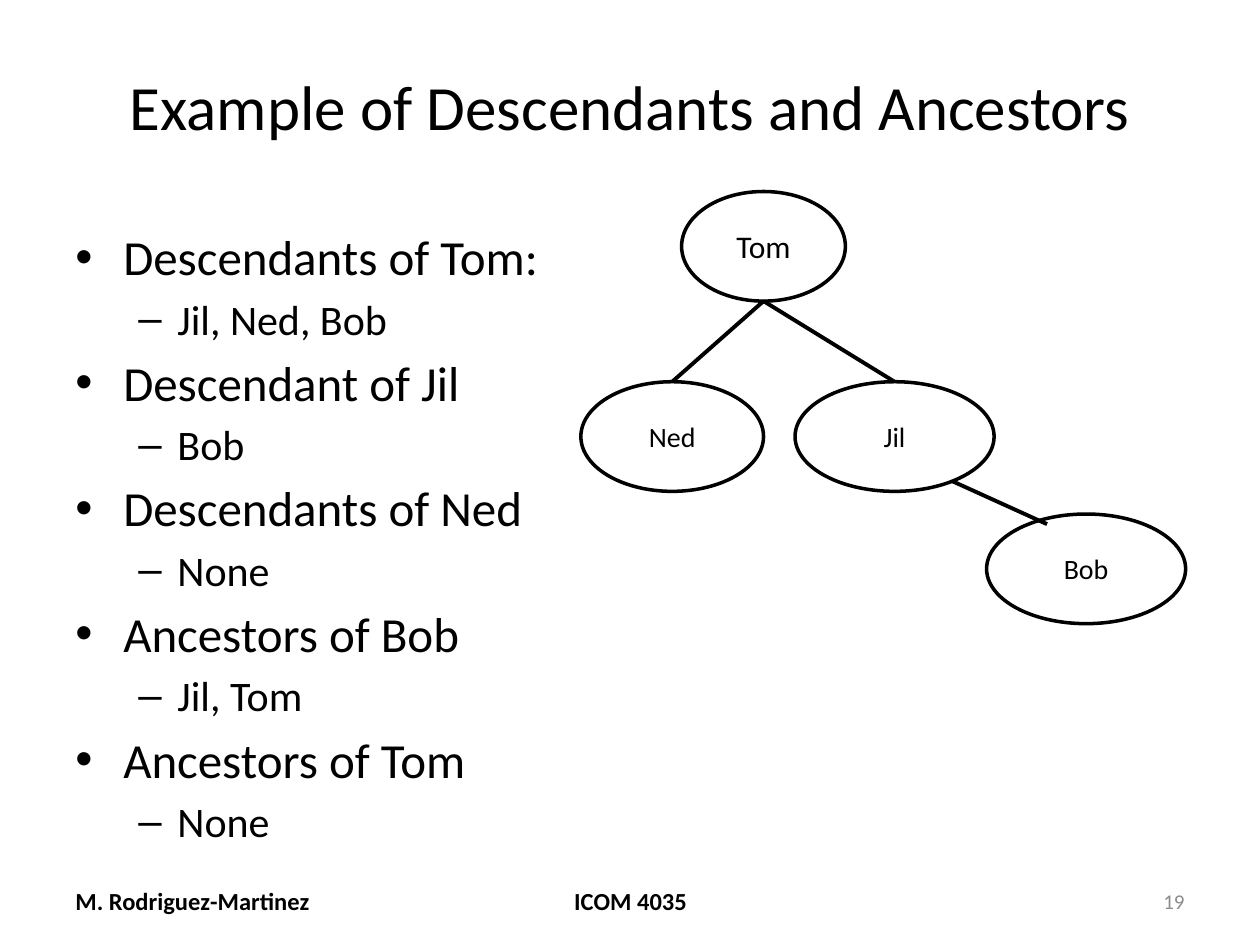
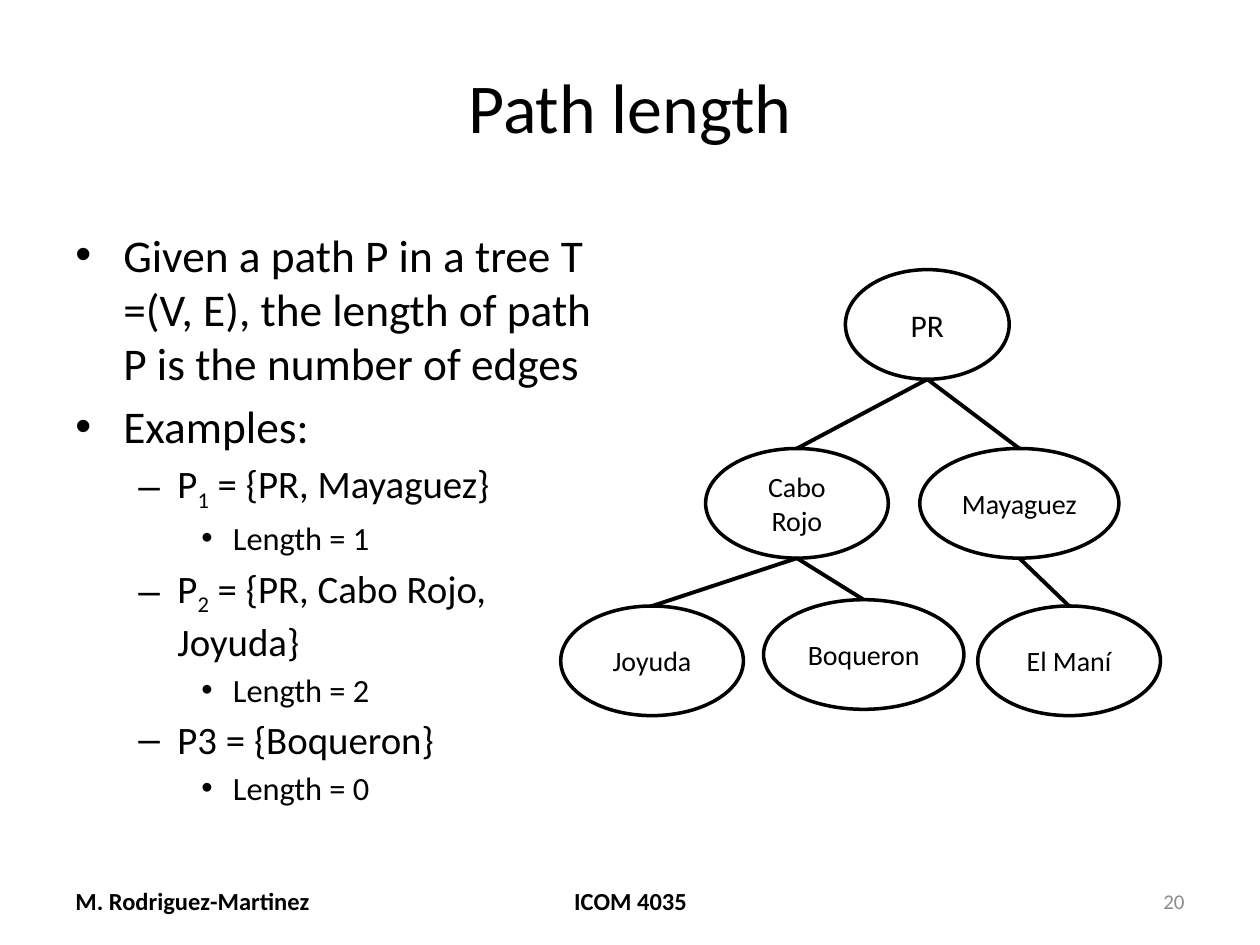
import pptx
import pptx.dml.color
import pptx.enum.shapes
import pptx.enum.text
import pptx.oxml.ns
import pptx.util
import lxml.etree
from dataclasses import dataclass

Inches = pptx.util.Inches
Pt = pptx.util.Pt
Align = pptx.enum.text.PP_ALIGN
Anchor = pptx.enum.text.MSO_ANCHOR
qn = pptx.oxml.ns.qn


@dataclass(frozen=True)
class Theme:
    font: str = "Calibri"
    black: pptx.dml.color.RGBColor = pptx.dml.color.RGBColor(0, 0, 0)
    white: pptx.dml.color.RGBColor = pptx.dml.color.RGBColor(255, 255, 255)
    gray: pptx.dml.color.RGBColor = pptx.dml.color.RGBColor(0x8C, 0x8C, 0x8C)
    root_size: float = 18
    node_size: float = 16
    footer_size: float = 14
    number_size: float = 12
    outline: float = 2
    edge: float = 2.25
    space_before: float = 0.18  # share of the type size


theme = Theme()

# Per outline level: bullet, text indent, hanging indent
LEVELS = [("•", 0.38, 0.38), ("–", 0.81, 0.31), ("•", 1.25, 0.25)]
NODE_HEIGHT = 0.87
ELLIPSE_TOP, RECTANGLE_BOTTOM, ELLIPSE_BOTTOM = 0, 2, 4

# Body lines are (level, text parts); every second part is a subscript.
# Nodes are name: (left, top, width). The first node is the root.
# Loose edges do not end at the top or bottom of a node.
SLIDES = [
    {
        "number": "19",
        "title": "Example of Descendants and Ancestors",
        "title_size": 36,
        "body_sizes": (28, 24),
        "body": [
            (0, ["Descendants of Tom:"]),
            (1, ["Jil, Ned, Bob"]),
            (0, ["Descendant of Jil"]),
            (1, ["Bob"]),
            (0, ["Descendants of Ned"]),
            (1, ["None"]),
            (0, ["Ancestors of Bob"]),
            (1, ["Jil, Tom"]),
            (0, ["Ancestors of Tom"]),
            (1, ["None"]),
        ],
        "nodes": {
            "Tom": (5.41, 1.52, 1.3),
            "Ned": (4.61, 3.03, 1.45),
            "Jil": (6.31, 3.03, 1.58),
            "Bob": (7.83, 4.08, 1.58),
        },
        "edges": [("Tom", "Ned"), ("Tom", "Jil")],
        "loose_edges": [(7.56, 3.82, 8.31, 4.16)],
    },
    {
        "number": "20",
        "title": "Path length",
        "title_size": 40,
        "body_sizes": (25.9, 22.2, 18.5),
        "body": [
            (0, ["Given a path P in a tree T =(V, E), the length of path "
                 "P is the number of edges"]),
            (0, ["Examples:"]),
            (1, ["P", "1", " = {PR, Mayaguez}"]),
            (2, ["Length = 1"]),
            (1, ["P", "2", " = {PR, Cabo Rojo, Joyuda}"]),
            (2, ["Length = 2"]),
            (1, ["P3 = {Boqueron}"]),
            (2, ["Length = 0"]),
        ],
        "nodes": {
            "PR": (6.71, 2.14, 1.3),
            "Cabo Rojo": (5.6, 3.56, 1.45),
            "Mayaguez": (7.3, 3.56, 1.58),
            "Joyuda": (4.45, 4.81, 1.45),
            "Boqueron": (6.06, 4.76, 1.59),
            "El Maní": (7.76, 4.81, 1.45),
        },
        "edges": [
            ("PR", "Cabo Rojo"),
            ("PR", "Mayaguez"),
            ("Cabo Rojo", "Joyuda"),
            ("Cabo Rojo", "Boqueron"),
            ("Mayaguez", "El Maní"),
        ],
        "loose_edges": [],
    },
]


def write_label(shape, text, size, align=Align.CENTER, color=theme.black, bold=False):
    """Put one vertically centred line of text in a shape or text box."""
    frame = shape.text_frame
    frame.text = text
    frame.word_wrap = True
    frame.vertical_anchor = Anchor.MIDDLE
    paragraph = frame.paragraphs[0]
    paragraph.alignment = align
    font = paragraph.runs[0].font
    font.name, font.size, font.bold = theme.font, Pt(size), bold
    font.color.rgb = color


def add_edge(slide, start_x, start_y, end_x, end_y):
    connector = slide.shapes.add_connector(
        pptx.enum.shapes.MSO_CONNECTOR.STRAIGHT,
        Inches(start_x), Inches(start_y), Inches(end_x), Inches(end_y))
    connector.line.color.rgb = theme.black
    connector.line.width = Pt(theme.edge)
    lxml.etree.SubElement(connector._element.spPr, qn("a:effectLst"))
    return connector


presentation = pptx.Presentation()
presentation.slide_width = Inches(10)
presentation.slide_height = Inches(7.5)

for content in SLIDES:
    slide = presentation.slides.add_slide(presentation.slide_layouts[6])

    title = slide.shapes.add_textbox(Inches(0.5), Inches(0.3), Inches(9), Inches(1.07))
    write_label(title, content["title"], content["title_size"])

    body = slide.shapes.add_textbox(Inches(0.5), Inches(1.75), Inches(4.42), Inches(4.95))
    body.text_frame.word_wrap = True
    for index, (level, parts) in enumerate(content["body"]):
        frame = body.text_frame
        paragraph = frame.add_paragraph() if index else frame.paragraphs[0]
        bullet, indent, hanging = LEVELS[level]
        size = content["body_sizes"][level]
        properties = paragraph._p.get_or_add_pPr()
        properties.set("marL", str(Inches(indent)))
        properties.set("indent", str(-Inches(hanging)))
        lxml.etree.SubElement(properties, qn("a:buFont"), typeface="Arial")
        lxml.etree.SubElement(properties, qn("a:buChar"), char=bullet)
        paragraph.level = level
        if index:
            paragraph.space_before = Pt(size * theme.space_before)
        for position, part in enumerate(parts):
            run = paragraph.add_run()
            run.text = part
            run.font.name, run.font.size = theme.font, Pt(size)
            run.font.color.rgb = theme.black
            if position % 2:
                run.font._element.set("baseline", "-25000")

    for left, width, text, size, align, color, bold in [
        (0.5, 2.33, "M. Rodriguez-Martinez", theme.footer_size, Align.LEFT, theme.black, True),
        (3.42, 3.17, "ICOM 4035", theme.footer_size, Align.CENTER, theme.black, True),
        (7.17, 2.33, content["number"], theme.number_size, Align.RIGHT, theme.gray, False),
    ]:
        footer = slide.shapes.add_textbox(Inches(left), Inches(6.95), Inches(width), Inches(0.4))
        write_label(footer, text, size, align, color, bold)

    nodes = {}
    for name, (left, top, width) in content["nodes"].items():
        node = slide.shapes.add_shape(
            pptx.enum.shapes.MSO_SHAPE.OVAL,
            Inches(left), Inches(top), Inches(width), Inches(NODE_HEIGHT))
        node.shadow.inherit = False
        node.fill.solid()
        node.fill.fore_color.rgb = theme.white
        node.line.color.rgb = theme.black
        node.line.width = Pt(theme.outline)
        node.text_frame.margin_left = node.text_frame.margin_right = Inches(0.08)
        write_label(node, name, theme.node_size if nodes else theme.root_size)
        nodes[name] = node

    for parent, child in content["edges"]:
        connector = add_edge(slide, 0, 0, 1, 1)
        connector.begin_connect(nodes[parent], RECTANGLE_BOTTOM)
        connector.end_connect(nodes[child], ELLIPSE_TOP)
        # An ellipse has eight connection sites, so its bottom has another index.
        start = connector._element.find(".//" + qn("a:stCxn"))
        start.set("idx", str(ELLIPSE_BOTTOM))

    for points in content["loose_edges"]:
        add_edge(slide, *points)

presentation.save("out.pptx")
